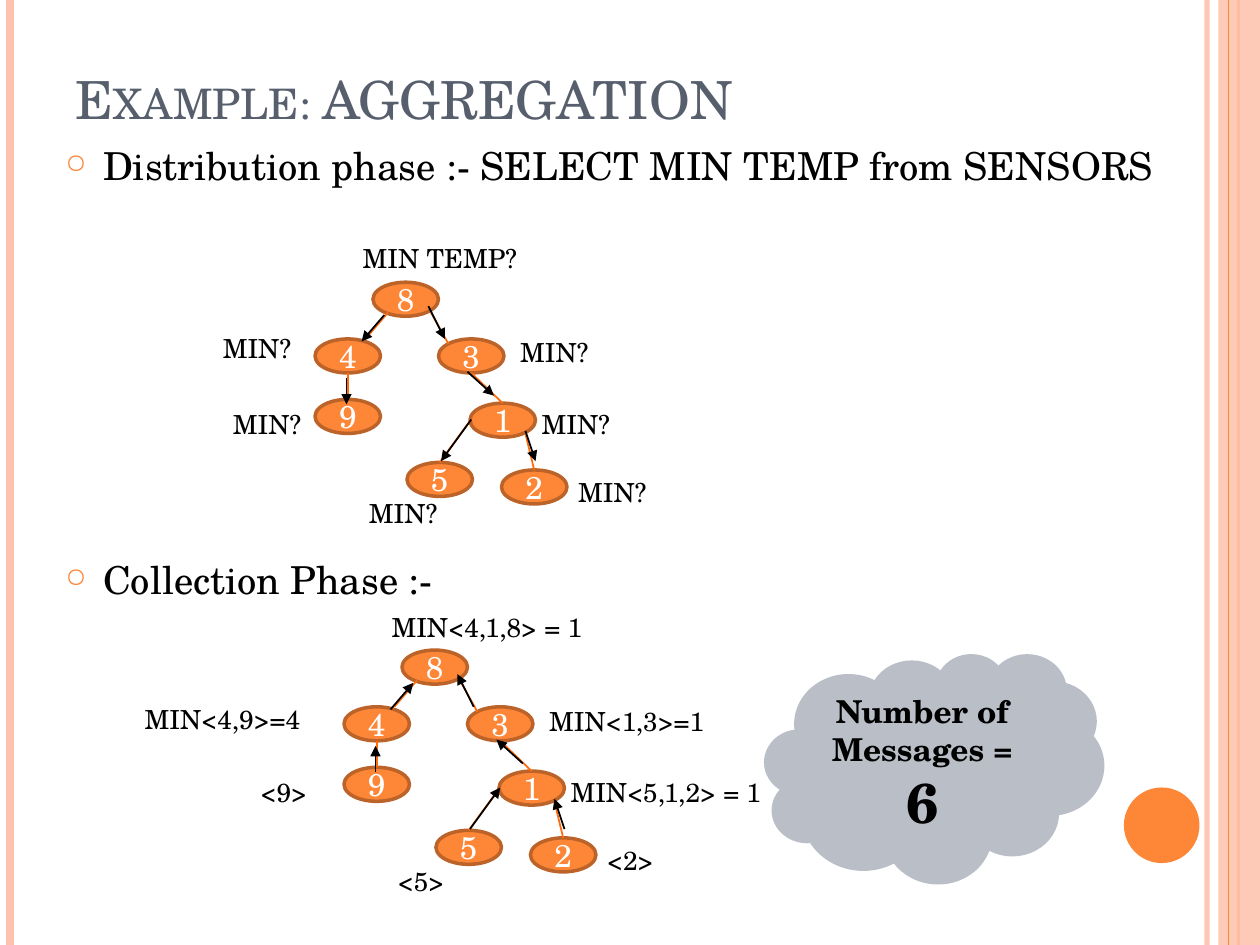
import pptx
import pptx.util
import pptx.dml.color
import pptx.enum.shapes
import pptx.enum.text
import pptx.oxml.ns
from lxml import etree

Inches = pptx.util.Inches
Pt = pptx.util.Pt
RGBColor = pptx.dml.color.RGBColor
Shape = pptx.enum.shapes.MSO_SHAPE
Anchor = pptx.enum.text.MSO_ANCHOR
Align = pptx.enum.text.PP_ALIGN
Fit = pptx.enum.text.MSO_AUTO_SIZE
qn = pptx.oxml.ns.qn

FONT = "TeX Gyre Schola"
BLACK = RGBColor(0x00, 0x00, 0x00)
WHITE = RGBColor(0xFF, 0xFF, 0xFF)
SLATE = RGBColor(0x57, 0x5F, 0x6D)
GRAY = RGBColor(0xB9, 0xBE, 0xC7)
PEACH = RGBColor(0xFE, 0xC3, 0xAE)
ORANGE = RGBColor(0xFE, 0x86, 0x37)
RUST = RGBColor(0xBC, 0x63, 0x29)
EDGE = RGBColor(0xFF, 0x6B, 0x0A)

# The tree: node centers are fixed by left and top, all of one size
NODE_W, NODE_H = 0.52, 0.27
NODES = [("8", 2.96, 2.24), ("4", 2.5, 2.69), ("3", 3.48, 2.69),
         ("9", 2.5, 3.17), ("1", 3.73, 3.2), ("2", 3.98, 3.73),
         ("5", 3.23, 3.67)]
EDGES = [(3.08, 2.48, 2.9, 2.69), (3.42, 2.48, 3.56, 2.73),
         (2.76, 2.96, 2.76, 3.17), (3.74, 2.96, 3.99, 3.2),
         (4.17, 3.44, 4.24, 3.73), (3.73, 3.34, 3.49, 3.67)]
ARROWS = [(3.05, 2.5, 2.87, 2.71), (3.4, 2.43, 3.53, 2.69),
          (2.75, 3, 2.75, 3.21), (3.71, 2.95, 3.92, 3.14),
          (3.74, 3.33, 3.5, 3.66), (4.17, 3.42, 4.25, 3.66)]
SHIFT = (0.23, 2.92)

# Labels: text, left, top, width
ASKS = [("MIN TEMP?", 2.78, 1.87, 1.44)] + [
    ("MIN?", x, y, 0.75) for x, y in
    [(1.67, 2.59), (4.03, 2.62), (1.75, 3.19), (4.2, 3.19),
     (4.49, 3.73), (2.83, 3.9)]]
REPLIES = [("MIN<4,1,8> = 1", 3.01, 4.8, 1.8), ("MIN<4,9>=4", 1.05, 5.53, 1.45),
           ("MIN<1,3>=1", 4.26, 5.55, 1.45), ("<9>", 1.97, 6.11, 0.58),
           ("MIN<5,1,2> = 1", 4.43, 6.11, 1.74), ("<2>", 4.72, 6.65, 0.58),
           ("<5>", 3.06, 6.82, 0.58)]


def add_run(para, text, size, color, bold=False):
    run = para.add_run()
    run.text = text
    font = run.font
    font.name, font.size, font.bold = FONT, Pt(size), bold
    font.color.rgb = color
    return run


def fade(part, percent):
    """Set the opacity of the solid color inside a fill or line."""
    color = part.find(".//" + qn("a:srgbClr"))
    etree.SubElement(color, qn("a:alpha"), val=str(percent * 1000))


def add_line(slide, ends, color, width, tip=None):
    link = slide.shapes.add_connector(
        pptx.enum.shapes.MSO_CONNECTOR.STRAIGHT, *map(Inches, ends))
    link.line.color.rgb = color
    link.line.width = Pt(width)
    if tip:
        etree.SubElement(link.line._get_or_add_ln(), qn(tip), type="triangle")
    etree.SubElement(link._element.spPr, qn("a:effectLst"))
    return link


def add_form(slide, kind, box, fill, line=None):
    form = slide.shapes.add_shape(kind, *map(Inches, box))
    form.shadow.inherit = False
    form.fill.solid()
    form.fill.fore_color.rgb = fill
    if line is None:
        form.line.fill.background()
    else:
        form.line.color.rgb = line
        form.line.width = Pt(2)
    frame = form.text_frame
    frame.vertical_anchor = Anchor.MIDDLE
    frame.paragraphs[0].alignment = Align.CENTER
    return form


def add_box(slide, box, wrap=True):
    frame = slide.shapes.add_textbox(*map(Inches, box)).text_frame
    frame.word_wrap = wrap
    return frame


def add_label(slide, text, left, top, width):
    frame = add_box(slide, (left, top, width, 0.35), wrap=False)
    frame.auto_size = Fit.SHAPE_TO_FIT_TEXT
    add_run(frame.paragraphs[0], text, 15, BLACK)


def add_point(para, text, before):
    para.space_before = Pt(before)
    props = para._p.get_or_add_pPr()
    props.set("marL", str(Inches(0.3)))
    props.set("indent", str(-Inches(0.3)))
    tint = etree.SubElement(props, qn("a:buClr"))
    etree.SubElement(tint, qn("a:srgbClr"), val=str(ORANGE))
    etree.SubElement(props, qn("a:buSzPct"), val="70000")
    etree.SubElement(props, qn("a:buChar"), char="○")
    add_run(para, text, 22, BLACK)


def add_tree(slide, dx, dy, tip, labels):
    def move(ends):
        return [n + d for n, d in zip(ends, (dx, dy, dx, dy))]

    for text, left, top in NODES:
        box = (left + dx, top + dy, NODE_W, NODE_H)
        node = add_form(slide, Shape.OVAL, box, ORANGE, RUST)
        add_run(node.text_frame.paragraphs[0], text, 18, WHITE)
    for ends in EDGES:
        add_line(slide, move(ends), EDGE, 1)
    for label in labels:
        add_label(slide, *label)
    for ends in ARROWS:
        add_line(slide, move(ends), BLACK, 1, tip)


def add_frame(slide):
    def rule(x, color, width):
        return add_line(slide, (x, 0, x, 7.5), color, width)

    fade(rule(9.58, PEACH, 3)._element.spPr, 93)
    rule(0.08, PEACH, 4.5)
    rule(9.83, ORANGE, 1.5)
    band = add_form(slide, Shape.RECTANGLE, (9.67, 0, 0.33, 7.5), PEACH)
    fade(band._element.spPr, 87)
    rule(9.75, ORANGE, 0.75)
    add_form(slide, Shape.OVAL, (8.92, 6.25, 0.6, 0.6), ORANGE)


def main():
    deck = pptx.Presentation()
    deck.slide_width, deck.slide_height = Inches(10), Inches(7.5)
    slide = deck.slides.add_slide(deck.slide_layouts[6])

    # Side rules and page dot
    add_frame(slide)

    # Phases, the second one below the first tree
    body = add_box(slide, (0.42, 1.08, 9.33, 6.25))
    add_point(body.paragraphs[0], "Distribution phase :- SELECT MIN TEMP from SENSORS", 6)
    add_point(body.add_paragraph(), "Collection Phase :-", 210)

    # Title
    title = add_box(slide, (0.5, 0.3, 8.17, 0.78))
    title.vertical_anchor = Anchor.BOTTOM
    run = add_run(title.paragraphs[0], "Example: AGGREGATION", 30, SLATE)
    run._r.get_or_add_rPr().set("cap", "small")

    # Queries go down, answers come up
    add_tree(slide, 0, 0, "a:tailEnd", ASKS)
    add_tree(slide, *SHIFT, "a:headEnd", REPLIES)

    # Message count
    cloud = add_form(slide, Shape.CLOUD, (6.08, 5.2, 2.67, 1.8), GRAY, GRAY)
    cloud.text_frame.word_wrap = True
    para = cloud.text_frame.paragraphs[0]
    add_run(para, "Number of Messages = ", 18, BLACK, True)
    add_run(para, "6", 32, BLACK, True)

    deck.save("out.pptx")


if __name__ == "__main__":
    main()
